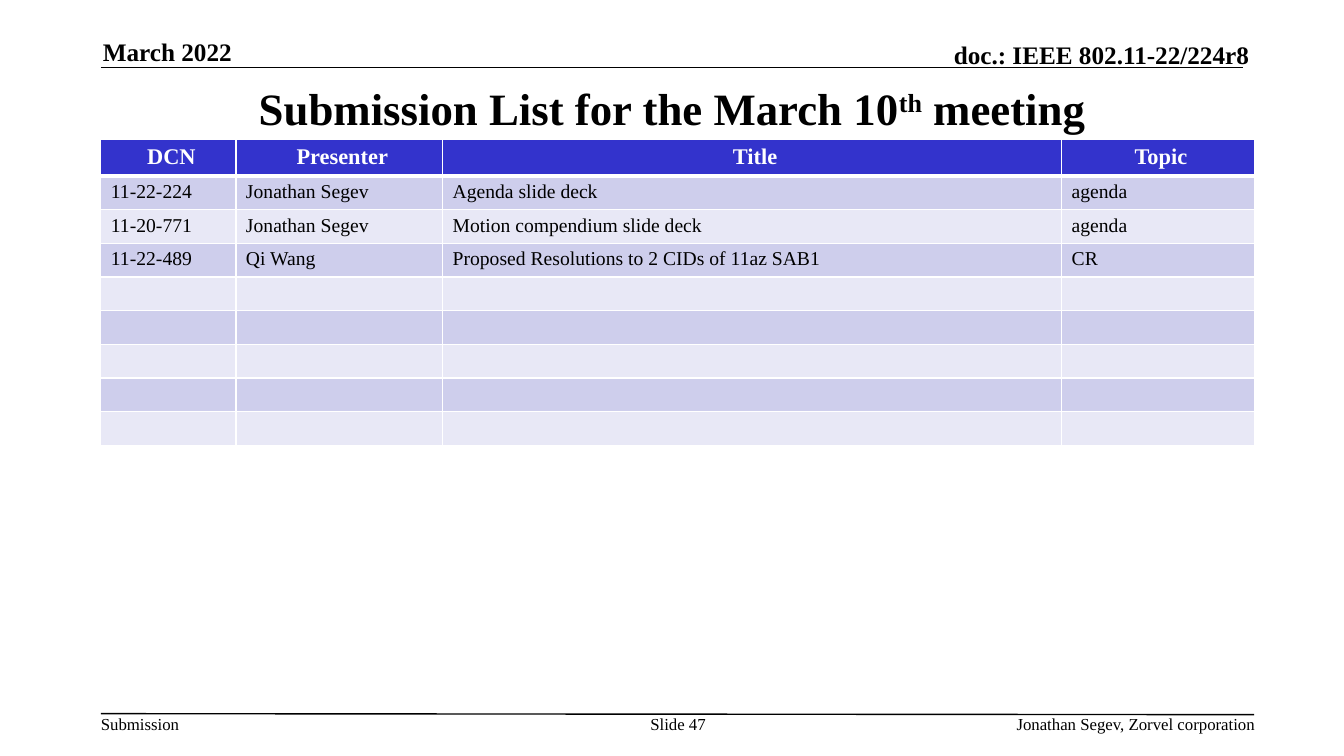
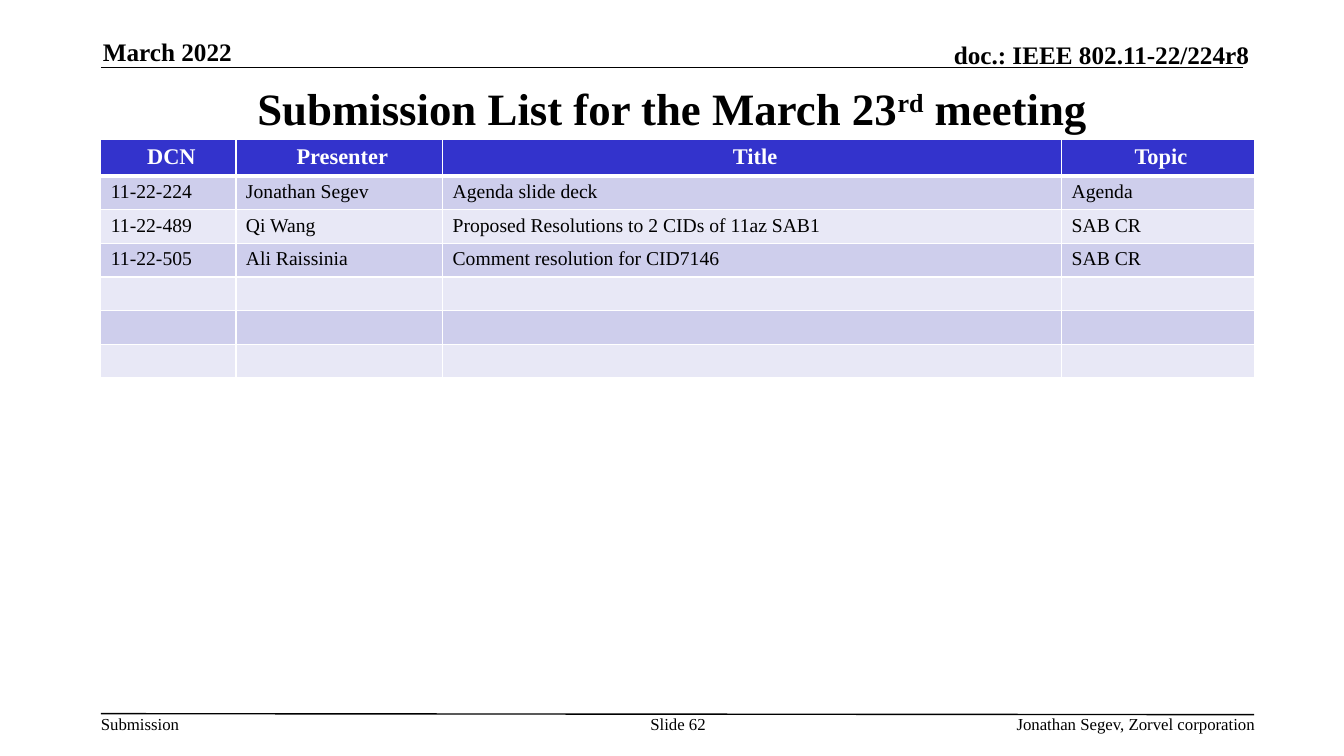
from lxml.etree import SubElement
from pptx import Presentation
from pptx.dml.color import RGBColor
from pptx.enum.text import MSO_ANCHOR, MSO_AUTO_SIZE, PP_ALIGN
from pptx.oxml.ns import qn
from pptx.text.text import Font
from pptx.util import Inches, Pt

COLORS = {
    "text": "000000",
    "white": "FFFFFF",
    "header": "3333CC",
    "band_dark": "CECEEC",
    "band_light": "E8E8F6",
}
FONT = "Times New Roman"
LEFT = 1
COLUMNS = {"DCN": 1.34, "Presenter": 2.05, "Title": 6.14, "Topic": 1.91}
HEADER_H, ROW_H = 0.34, 0.31


class Deck:
    def __init__(self):
        self.prs = Presentation()
        self.prs.slide_width = Inches(13.33)
        self.prs.slide_height = Inches(7.5)
        self.s = None

    def color(self, name):
        return RGBColor.from_string(COLORS[name])

    def style(self, font, size, bold=False, color="text"):
        font.name, font.size, font.bold = FONT, Pt(size), bold
        font.color.rgb = self.color(color)

    def new_slide(self, number):
        self.s = self.prs.slides.add_slide(self.prs.slide_layouts[5])
        self.line(LEFT, 0.67, 12.33, 0.67)
        self.text("March 2022", 1.02, 0.36, 2.73, 0.3, 18, True, anchor=MSO_ANCHOR.BOTTOM)
        self.text("doc.: IEEE 802.11-22/224r8", 7.29, 0.39, 5.1, 0.3, 18, True,
                  PP_ALIGN.RIGHT, MSO_ANCHOR.BOTTOM)
        self.line(LEFT, 7.08, 12.44, 7.09)
        self.text("Submission", LEFT, 7.08, 0.79, 0.2, 12)
        self.text(f"Slide {number}", 6.34, 7.08, 0.77, 0.4, 12, align=PP_ALIGN.CENTER)
        self.text("Jonathan Segev, Zorvel corporation", 7.81, 7.08, 4.64, 0.2, 12,
                  align=PP_ALIGN.RIGHT)

    def line(self, x1, y1, x2, y2):
        cn = self.s.shapes.add_connector(1, Inches(x1), Inches(y1), Inches(x2), Inches(y2))
        cn.line.color.rgb = self.color("text")
        cn.line.width = Pt(1)
        SubElement(cn._element.spPr, qn("a:effectLst"))

    def text(self, text, x, y, w, h, size, bold=False, align=PP_ALIGN.LEFT,
             anchor=MSO_ANCHOR.TOP):
        sp = self.s.shapes.add_textbox(Inches(x), Inches(y), Inches(w), Inches(h))
        tf = sp.text_frame
        tf.word_wrap = True
        tf.vertical_anchor = anchor
        tf.margin_left = tf.margin_right = tf.margin_top = tf.margin_bottom = 0
        p = tf.paragraphs[0]
        p.text, p.alignment = text, align
        self.style(p.font, size, bold)

    def title(self, day, suffix):
        sp = self.s.shapes.title
        sp.left, sp.top = Inches(LEFT), Inches(0.75)
        sp.width, sp.height = Inches(11.33), Inches(0.64)
        tf = sp.text_frame
        tf.auto_size = MSO_AUTO_SIZE.NONE
        tf.vertical_anchor = MSO_ANCHOR.MIDDLE
        p = tf.paragraphs[0]
        p.alignment = PP_ALIGN.CENTER
        self.style(p.font, 32, True)
        for text, raised in ((f"Submission List for the March {day}", False),
                             (suffix, True), (" meeting", False)):
            r = p.add_run()
            r.text = text
            if raised:
                r._r.get_or_add_rPr().set("baseline", "30000")

    def borders(self, cell, top, bottom):
        tc_pr = cell._tc.get_or_add_tcPr()
        for side, width in (("L", 1), ("R", 1), ("T", top), ("B", bottom)):
            ln = SubElement(tc_pr, qn(f"a:ln{side}"), w=str(Pt(width)))
            fill = SubElement(ln, qn("a:solidFill"))
            SubElement(fill, qn("a:srgbClr"), val=COLORS["white"])

    def cell(self, cell, text, row):
        is_header = row == 0
        self.borders(cell, 3 if row == 1 else 1, 3 if is_header else 1)
        cell.fill.solid()
        band = "band_dark" if row % 2 else "band_light"
        cell.fill.fore_color.rgb = self.color("header" if is_header else band)
        p = cell.text_frame.paragraphs[0]
        if is_header:
            cell.margin_right = Inches(0.04)
            p.alignment = PP_ALIGN.CENTER
        if text:
            p.text = text
            font = p.font
        else:
            font = Font(p._p.get_or_add_endParaRPr())
        self.style(font, 16 if is_header else 14, is_header,
                   "white" if is_header else "text")

    def table(self, submissions, empty_rows):
        blank = ("",) * len(COLUMNS)
        rows = [tuple(COLUMNS), *submissions, *[blank] * empty_rows]
        height = HEADER_H + ROW_H * (len(rows) - 1)
        tbl = self.s.shapes.add_table(len(rows), len(COLUMNS), Inches(LEFT), Inches(1.38),
                                      Inches(sum(COLUMNS.values())), Inches(height)).table
        for col, width in zip(tbl.columns, COLUMNS.values()):
            col.width = Inches(width)
        for i, row in enumerate(rows):
            tbl.rows[i].height = Inches(ROW_H if i else HEADER_H)
            for j, text in enumerate(row):
                self.cell(tbl.cell(i, j), text, i)


MEETINGS = [
    (47, "10", "th", [
        ("11-22-224", "Jonathan Segev", "Agenda slide deck", "agenda"),
        ("11-20-771", "Jonathan Segev", "Motion compendium slide deck", "agenda"),
        ("11-22-489", "Qi Wang", "Proposed Resolutions to 2 CIDs of 11az SAB1", "CR"),
    ], 5),
    (62, "23", "rd", [
        ("11-22-224", "Jonathan Segev", "Agenda slide deck", "Agenda"),
        ("11-22-489", "Qi Wang", "Proposed Resolutions to 2 CIDs of 11az SAB1", "SAB CR"),
        ("11-22-505", "Ali Raissinia", "Comment resolution for CID7146", "SAB CR"),
    ], 3),
]


def main():
    deck = Deck()
    for number, day, suffix, submissions, empty_rows in MEETINGS:
        deck.new_slide(number)
        deck.title(day, suffix)
        deck.table(submissions, empty_rows)
    deck.prs.save("out.pptx")


if __name__ == "__main__":
    main()
